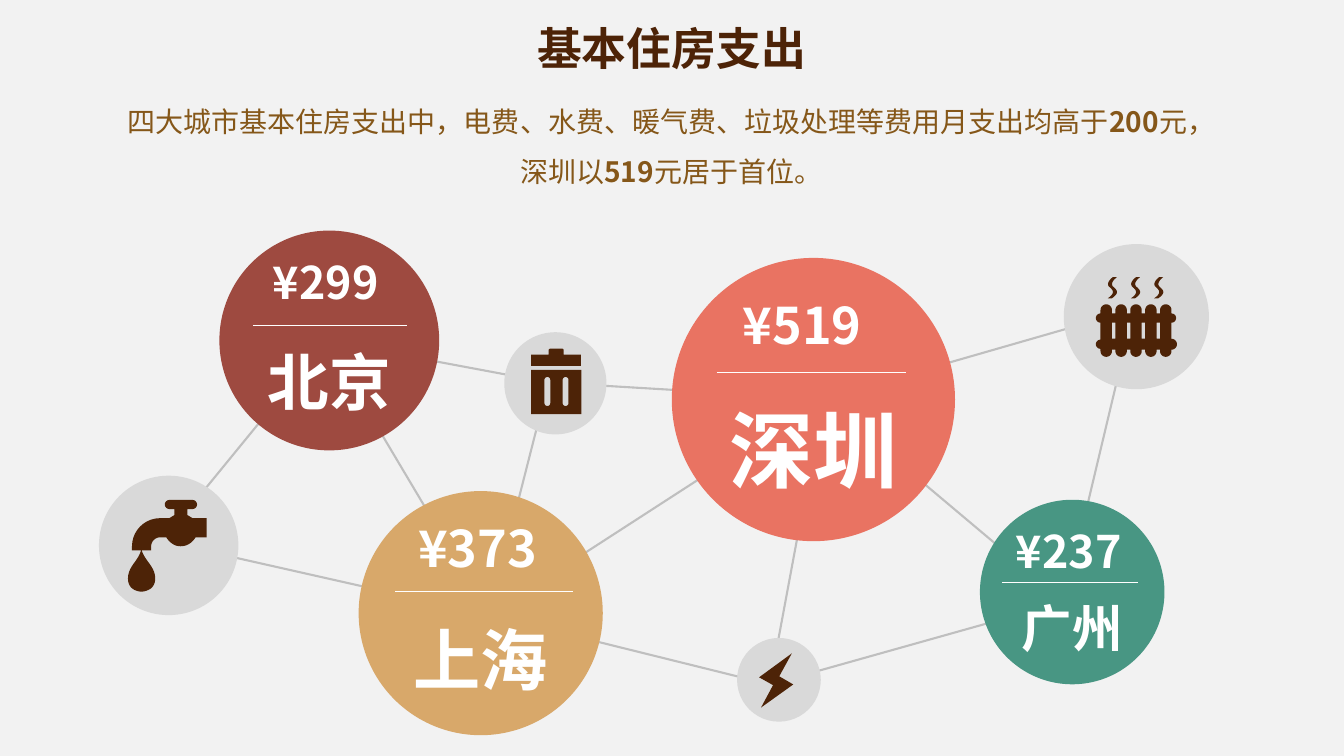
"""Build a slide on basic housing costs in four cities."""
from itertools import pairwise
from math import cos, radians, sin

from lxml import etree
from pptx import Presentation
from pptx.dml.color import RGBColor
from pptx.enum.shapes import MSO_CONNECTOR, MSO_SHAPE
from pptx.enum.text import MSO_ANCHOR, MSO_AUTO_SIZE, PP_ALIGN
from pptx.oxml.ns import qn
from pptx.util import Pt

STRAIGHT, OVAL = MSO_CONNECTOR.STRAIGHT, MSO_SHAPE.OVAL
TOP, BOTTOM = MSO_ANCHOR.TOP, MSO_ANCHOR.BOTTOM
CENTER, LEFT = PP_ALIGN.CENTER, PP_ALIGN.LEFT
GROW = MSO_AUTO_SIZE.SHAPE_TO_FIT_TEXT
FONT = "Noto Sans CJK SC"
COLORS = {
    "background": "F2F2F2", "link": "BFBFBF", "disc": "D9D9D9", "white": "FFFFFF",
    "dark": "4D2307", "brown": "855719", "shenzhen": "E97362",
    "guangzhou": "489683", "beijing": "9E4A40", "shanghai": "D8A86A",
}
CITIES = [
    ("深圳", "shenzhen", (581, 285.4), 202.3, 60),
    ("广州", "guangzhou", (765.9, 422.9), 131.8, 36),
    ("北京", "beijing", (235.2, 243.2), 157, 44),
    ("上海", "shanghai", (343.4, 438), 174.4, 48),
]
AMOUNTS = [
    ("¥299", (187.9, 178.6, 94.3, 46.1), 32, (180.7, 290.9, 232.6)),
    ("¥519", (523.4, 206.6, 115.2, 51.1), 36, (511.9, 647.3, 265.7)),
    ("¥373", (291.6, 365.8, 104.4, 51.1), 36, (282.2, 409, 422.6)),
    ("¥237", (718.6, 370.8, 94.3, 46.1), 32, (715.7, 812.9, 416.2)),
]
DISCS = [((556.4, 485.6), 59.8), ((396.7, 273.8), 73), ((120.5, 389.6), 99.6), ((811.7, 226.2), 103.7)]
NODES = {
    "beijing": (233, 243.5), "trash": (391.7, 273.2), "shenzhen": (588, 284.9),
    "radiator": (810, 221), "bolt": (550, 488.9), "guangzhou": (760.3, 429.8),
    "tap": (116, 386.6), "shanghai": (349.4, 439.2),
}
LINKS = [
    ("beijing", "trash"), ("trash", "shenzhen"), ("radiator", "shenzhen"),
    ("bolt", "guangzhou"), ("tap", "shanghai"), ("shanghai", "shenzhen"),
    ("tap", "beijing"), ("bolt", "shanghai"), ("radiator", "guangzhou"),
    ("beijing", "shanghai"), ("shenzhen", "bolt"), ("shenzhen", "guangzhou"),
    ("trash", "shanghai"),
]


def rgb(name):
    """Return the named colour."""
    return RGBColor.from_string(COLORS[name])


def set_format(target, **values):
    """Set several attributes of one object."""
    for key, value in values.items():
        setattr(target, key, value)


def write(frame, parts, size, color, align=CENTER, spacing=None):
    """Fill the first paragraph with (text, bold) parts."""
    paragraph = frame.paragraphs[0]
    set_format(paragraph, alignment=align, line_spacing=spacing)
    for words, bold in parts:
        run = paragraph.add_run()
        run.text = words
        set_format(run.font, size=Pt(size), bold=bold, name=FONT)
        run.font.color.rgb = rgb(color)
        etree.SubElement(run._r.get_or_add_rPr(), qn("a:ea"), typeface=FONT)


def add_text(shapes, box, parts, size, color, wrap=True, **layout):
    """Add a text box that fits its words."""
    frame = shapes.add_textbox(*map(Pt, box)).text_frame
    set_format(frame, word_wrap=wrap, auto_size=GROW)
    write(frame, parts, size, color, **layout)


def add_line(shapes, start, end, color, width):
    """Add a straight line without a shadow."""
    line = shapes.add_connector(STRAIGHT, *map(Pt, (*start, *end)))
    set_format(line.line, width=Pt(width))
    line.line.color.rgb = rgb(color)
    etree.SubElement(line._element.spPr, qn("a:effectLst"))


def paint(shape, color):
    """Give a shape a flat fill with no outline or shadow."""
    shape.shadow.inherit = False
    shape.fill.solid()
    shape.fill.fore_color.rgb = rgb(color)
    shape.line.fill.background()


def add_circle(shapes, center, diameter, color):
    """Add a filled circle around a centre."""
    left, top = (value - diameter / 2 for value in center)
    circle = shapes.add_shape(OVAL, *map(Pt, (left, top, diameter, diameter)))
    paint(circle, color)
    return circle


def add_city(shapes, city, color, center, diameter, size):
    """Add a city circle with its name at the bottom."""
    frame = add_circle(shapes, center, diameter, color).text_frame
    set_format(frame, vertical_anchor=BOTTOM, word_wrap=True,
               margin_left=0, margin_right=0, margin_top=0, margin_bottom=0)
    write(frame, [(city, True)], size, "white")


def arc(x, y, radius, start, end):
    """Return points along a circular arc."""
    angles = [radians(start + (end - start) * step / 12) for step in range(13)]
    return [(x + radius * cos(angle), y + radius * sin(angle)) for angle in angles]


def curve(*points):
    """Return points along chained cubic curves."""
    result = [points[0]]
    for index in range(0, len(points) - 1, 3):
        ends = points[index:index + 4]
        for step in range(1, 11):
            t = step / 10
            weights = ((1 - t) ** 3, 3 * t * (1 - t) ** 2, 3 * t * t * (1 - t), t ** 3)
            result.append(tuple(sum(w * p[axis] for w, p in zip(weights, ends)) for axis in (0, 1)))
    return result


def rectangle(left, top, right, bottom):
    """Return the corners of a rectangle."""
    return [(left, top), (right, top), (right, bottom), (left, bottom)]


def add_outline(shapes, *contours):
    """Add a dark icon part; later contours are holes."""
    paths = [[(Pt(x), Pt(y)) for x, y in contour] for contour in contours]
    builder = shapes.build_freeform(*paths[0][0])
    for index, points in enumerate(paths):
        if index:
            builder.move_to(*points[0])
        builder.add_line_segments(points[1:], close=True)
    paint(builder.convert_to_shape(), "dark")


def add_bolt(shapes):
    """Add the electricity icon."""
    add_outline(shapes, [(542.2, 483.8), (565.6, 466.7), (556.6, 483.1),
                         (566.6, 488.9), (543.6, 505.4), (552.2, 489.4)])


def add_radiator(shapes):
    """Add the heating icon with its steam."""
    radius, columns = 4.1, [790.2 + 10.63 * index for index in range(5)]
    left, right = columns[0] - radius, columns[-1] + radius
    outline = []
    for x in columns:
        outline += [(x - radius, 223.9), *arc(x, 221.5, radius, 180, 360), (x + radius, 223.9)]
    outline += arc(right, 227.2, 3.3, -90, 90) + arc(right, 245.9, 3.9, -90, 90)
    for x in reversed(columns):
        outline += [(x + radius, 249.8), *arc(x, 250.8, radius, 0, 180), (x - radius, 249.8)]
    outline += arc(left, 245.9, 3.3, 90, 270) + arc(left, 227.2, 3.3, 90, 270)
    gaps = [rectangle(a + radius, 230.4, b - radius, 241.9) for a, b in pairwise(columns)]
    add_outline(shapes, outline, *gaps)
    rising = curve((2.9, 213.1), (9.4, 208.8), (5.8, 206.6), (3.6, 204.5),
                   (1.4, 201.6), (6.5, 198), (6.5, 198))
    falling = curve((3.6, 198), (3.6, 198), (-1.4, 201.6), (0.7, 204.5),
                    (2.9, 206.6), (6.5, 208.8), (0, 213.1))
    for index in range(3):
        add_outline(shapes, [(791.3 + 16.55 * index + x, y) for x, y in rising + falling])


def add_tap(shapes):
    """Add the water icon."""
    bowl = curve((139.7, 383.8), (137.5, 387.4), (133.9, 390.2), (128.9, 390.2),
                 (124.6, 390.2), (121, 387.4), (118.8, 383.8))
    spout = curve((114.5, 383.8), (110.9, 383.8), (108, 386.6), (108, 390.2))
    drop = curve((101.2, 393.1), (103.7, 401), (110.9, 404.6), (110.9, 413.3),
                 (110.9, 422.6), (101, 422.6), (101, 422.6), (101, 422.6), (91.4, 422.6),
                 (91.4, 413.3), (91.4, 404.6), (98.6, 401), (100.8, 393.1))
    neck = curve((94.3, 390.2), (94.3, 379.4), (103, 370.1), (114.5, 370.1))
    handle = arc(121, 360.35, 3.25, 90, 270) + arc(137.5, 360.35, 3.25, -90, 90)
    add_outline(shapes, [
        (137.5, 370.1), (147.6, 370.1), (147.6, 383.8), *bowl, *spout, (108, 393.1),
        *drop, (94.3, 393.1), *neck, (121, 370.1), (124.6, 367.9), (124.6, 363.6),
        *handle, (133.9, 363.6), (133.9, 367.9)])


def add_trash(shapes):
    """Add the waste icon."""
    tab = arc(393, 250.1, 1, 180, 270) + arc(401.6, 250.1, 1, 270, 360)
    add_outline(shapes, [(379.4, 253.4), (392, 253.4), *tab, (402.6, 253.4),
                         (415, 253.4), (415, 261.4), (379.4, 261.4)])
    slots = [arc(x, 271.4, 2.1, 180, 360) + arc(x, 288, 2.1, 0, 180) for x in (391, 404)]
    add_outline(shapes, rectangle(379.4, 264.2, 415.2, 295.9), *slots)


def add_title(slide):
    """Place and format the slide title."""
    title = slide.shapes.title
    set_format(title, left=Pt(372.2), top=Pt(11.5), width=Pt(215.3), height=Pt(46.1))
    set_format(title.text_frame, vertical_anchor=TOP, word_wrap=True, auto_size=GROW)
    write(title.text_frame, [("基本住房支出", True)], 32, "dark")


def main():
    """Assemble and save the slide."""
    deck = Presentation()
    set_format(deck, slide_width=Pt(960), slide_height=Pt(540))
    slide = deck.slides.add_slide(deck.slide_layouts[5])
    slide.background.fill.solid()
    slide.background.fill.fore_color.rgb = rgb("background")
    shapes = slide.shapes
    add_title(slide)
    network = shapes.add_group_shape().shapes
    for start, end in LINKS:
        add_line(network, NODES[start], NODES[end], "link", 1.5)
    summary = [("四大城市基本住房支出中，电费、水费、暖气费、垃圾处理等费用月支出均高于", False),
               ("200", True), ("元，深圳以", False), ("519", True), ("元居于首位。", False)]
    add_text(shapes, (79.9, 59, 799.2, 75.6), summary, 20, "brown", spacing=1.5)
    for city in CITIES:
        add_city(shapes, *city)
    for center, diameter in DISCS:
        add_circle(shapes, center, diameter, "disc")
    add_bolt(shapes)
    add_radiator(shapes.add_group_shape().shapes)
    add_tap(shapes)
    add_trash(shapes.add_group_shape().shapes)
    for amount, box, size, (left, right, y) in AMOUNTS:
        add_text(shapes, box, [(amount, True)], size, "white", wrap=False, align=LEFT)
        add_line(shapes, (left, y), (right, y), "white", 0.5)
    deck.save("out.pptx")


if __name__ == "__main__":
    main()
